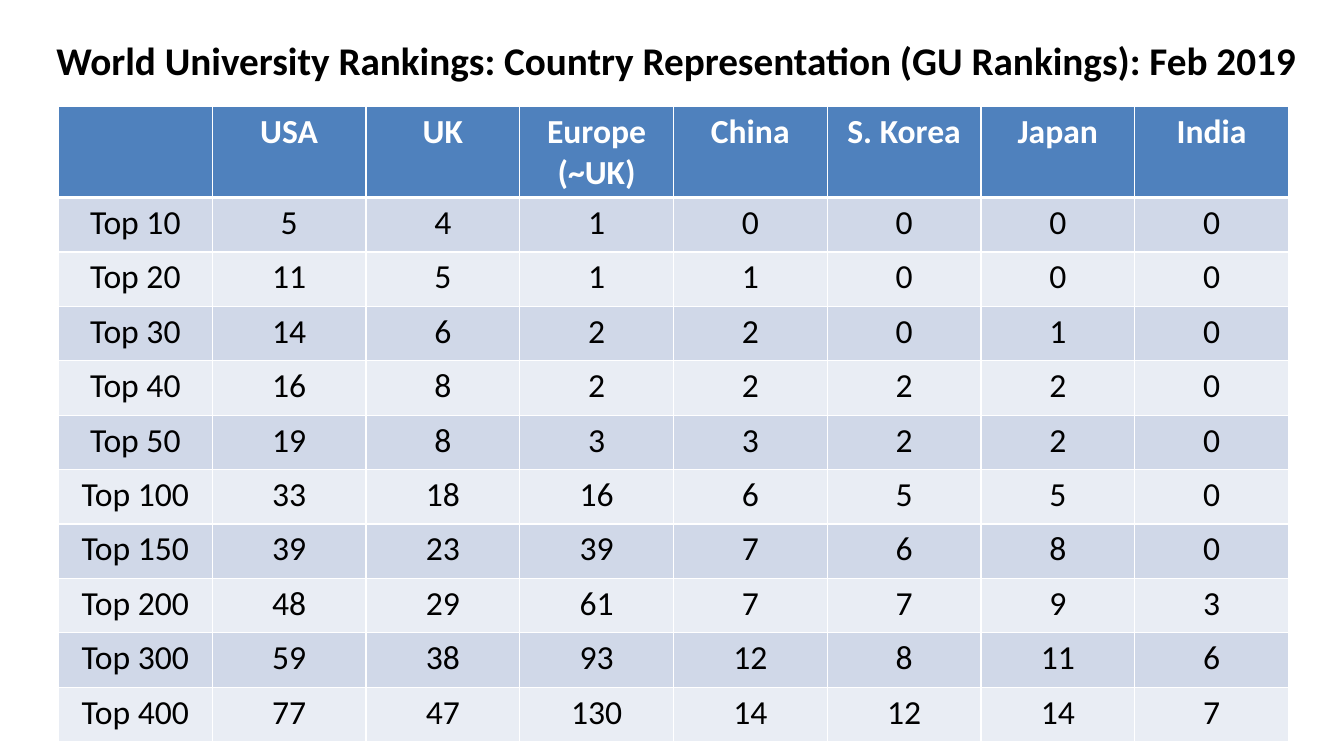
from lxml import etree
from pptx import Presentation
from pptx.dml.color import RGBColor
from pptx.enum import text
from pptx.oxml import ns
from pptx.util import Inches, Pt

BLACK = RGBColor(0x00, 0x00, 0x00)
WHITE = RGBColor(0xFF, 0xFF, 0xFF)
HEADER_BLUE = RGBColor(0x4F, 0x81, 0xBD)
BANDS = (RGBColor(0xD0, 0xD8, 0xE8), RGBColor(0xE9, 0xED, 0xF4))
FONT = "Calibri"

COUNTRIES = ("", "USA", "UK", "Europe\n(~UK)", "China", "S. Korea", "Japan", "India")
RANKINGS = (
    ("Top 10", 5, 4, 1, 0, 0, 0, 0),
    ("Top 20", 11, 5, 1, 1, 0, 0, 0),
    ("Top 30", 14, 6, 2, 2, 0, 1, 0),
    ("Top 40", 16, 8, 2, 2, 2, 2, 0),
    ("Top 50", 19, 8, 3, 3, 2, 2, 0),
    ("Top 100", 33, 18, 16, 6, 5, 5, 0),
    ("Top 150", 39, 23, 39, 7, 6, 8, 0),
    ("Top 200", 48, 29, 61, 7, 7, 9, 3),
    ("Top 300", 59, 38, 93, 12, 8, 11, 6),
    ("Top 400", 77, 47, 130, 14, 12, 14, 7),
)


def write_centred(frame, wording, size, color, bold):
    for index, line in enumerate(wording.split("\n")):
        paragraph = frame.add_paragraph() if index else frame.paragraphs[0]
        paragraph.alignment = text.PP_ALIGN.CENTER
        if not line:
            continue
        run = paragraph.add_run()
        run.text = line
        run.font.name = FONT
        run.font.size = Pt(size)
        run.font.bold = bold
        run.font.color.rgb = color


def add_title(slide, wording):
    title = slide.shapes.add_textbox(Inches(0.19), Inches(0.29), Inches(13.03), Inches(0.6))
    frame = title.text_frame
    frame.word_wrap = True
    frame.vertical_anchor = text.MSO_ANCHOR.MIDDLE
    write_centred(frame, wording, 28, BLACK, True)


def set_borders(cell, top, bottom):
    properties = cell._tc.get_or_add_tcPr()
    for side, width in (("L", 1), ("R", 1), ("T", top), ("B", bottom)):
        line = etree.SubElement(properties, ns.qn(f"a:ln{side}"), w=str(Pt(width)))
        fill = etree.SubElement(line, ns.qn("a:solidFill"))
        etree.SubElement(fill, ns.qn("a:srgbClr"), val=str(WHITE))


def style_cell(cell, wording, row):
    is_header = row == 0
    set_borders(cell, 3 if row == 1 else 1, 3 if is_header else 1)
    cell.fill.solid()
    cell.fill.fore_color.rgb = HEADER_BLUE if is_header else BANDS[(row - 1) % 2]
    write_centred(cell.text_frame, wording, 24, WHITE if is_header else BLACK, is_header)


def add_rankings_table(slide):
    rows = (COUNTRIES, *RANKINGS)
    frame = slide.shapes.add_table(
        len(rows), len(COUNTRIES), Inches(0.58), Inches(1.06), Inches(12.2), Inches(6.15))
    rankings = frame.table
    for column in rankings.columns:
        column.width = Inches(12.2 / len(COUNTRIES))
    for row, values in enumerate(rows):
        rankings.rows[row].height = Inches(0.54 if row else 0.75)
        for column, value in enumerate(values):
            style_cell(rankings.cell(row, column), str(value), row)


def main():
    deck = Presentation()
    deck.slide_width = Inches(13.33)
    deck.slide_height = Inches(7.5)
    slide = deck.slides.add_slide(deck.slide_layouts[6])
    add_title(slide, "World University Rankings: Country Representation (GU Rankings): Feb 2019")
    add_rankings_table(slide)
    deck.save("out.pptx")


if __name__ == "__main__":
    main()
